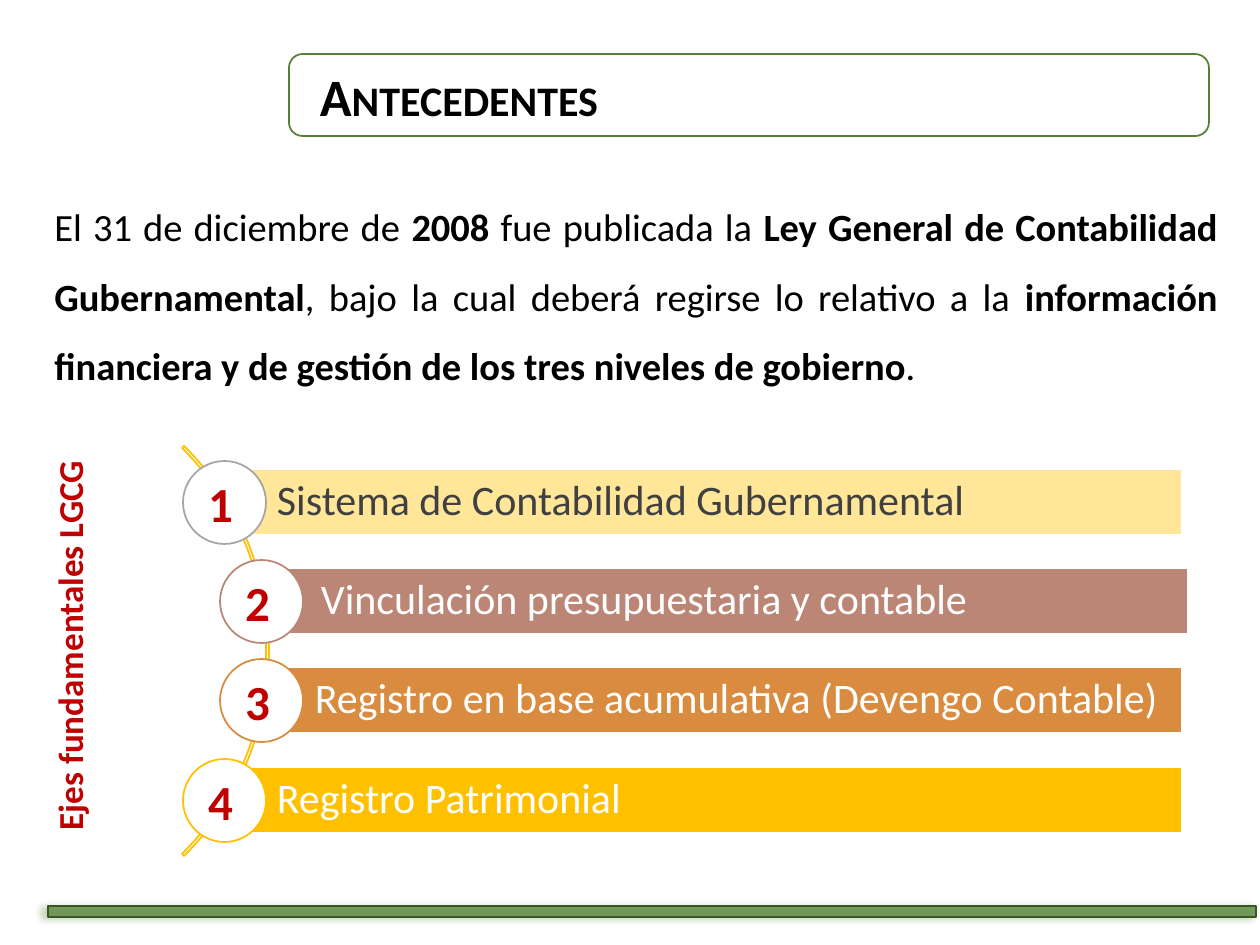
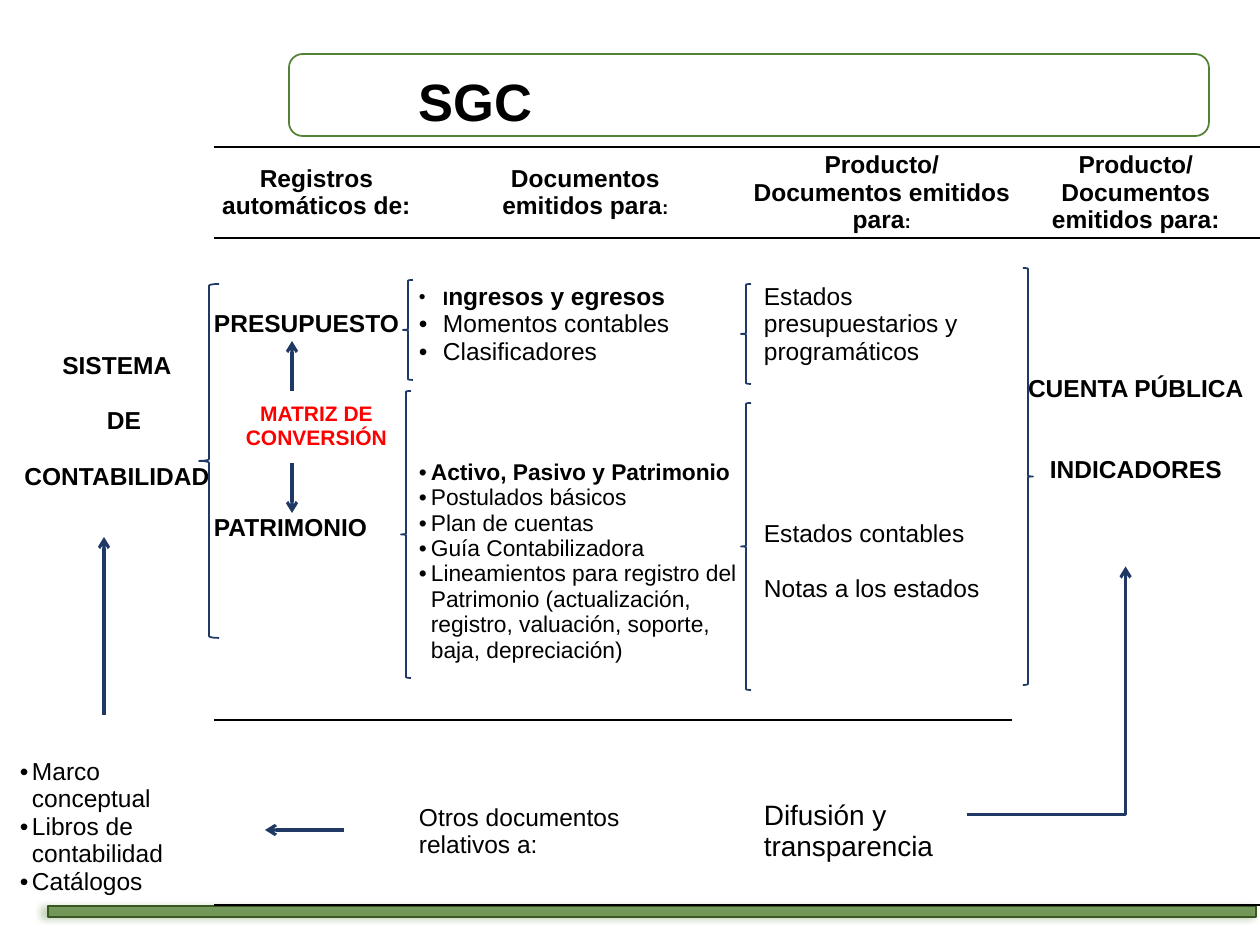
"""Build two slides on government accounting: background and the SGC scheme."""
from lxml import etree
from pptx import Presentation
from pptx.dml.color import RGBColor
from pptx.enum.shapes import MSO_CONNECTOR, MSO_SHAPE
from pptx.enum.text import MSO_ANCHOR, MSO_AUTO_SIZE, PP_ALIGN
from pptx.oxml.ns import qn
from pptx.util import Pt

RECT, ROUND, OVAL = MSO_SHAPE.RECTANGLE, MSO_SHAPE.ROUNDED_RECTANGLE, MSO_SHAPE.OVAL
ARC, OPEN, CLOSE = MSO_SHAPE.BLOCK_ARC, MSO_SHAPE.LEFT_BRACE, MSO_SHAPE.RIGHT_BRACE
LINE, ELBOW = MSO_CONNECTOR.STRAIGHT, MSO_CONNECTOR.ELBOW
LEFT, MID, JUST = PP_ALIGN.LEFT, PP_ALIGN.CENTER, PP_ALIGN.JUSTIFY
TOP, CENTER = MSO_ANCHOR.TOP, MSO_ANCHOR.MIDDLE
SCALE = 914400 / 126
HUES = {
    "black": "000000", "white": "FFFFFF", "gray": "404040", "ring": "A5A5A5",
    "green": "548235", "dark": "385723", "navy": "203864", "wine": "C00000",
    "red": "FF0000", "cream": "FFE699", "clay": "BB8676", "rust": "D98B3F",
    "gold": "FFC000",
}


def px(*nums):
    """Turn px into EMU."""
    return [round(n * SCALE) for n in nums]


def put(par, text, face, size, bold=False, hue="black"):
    """Add one run to a paragraph."""
    run = par.add_run()
    run.text = text
    font = run.font
    font.name, font.size, font.bold = face, Pt(size), bold
    font.color.rgb = RGBColor.from_string(HUES[hue])
    return run


deck = Presentation()
deck.slide_width, deck.slide_height = px(1260, 945)

TITLES = [
    ("Antecedentes", "Calibri", (306, 53, 306, 78)),
    ("SGC", "Arial", (349, 58, 140, 76)),
]
for name, face, box in TITLES:
    slide = deck.slides.add_slide(deck.slide_layouts[5])
    title = slide.shapes.title
    title.left, title.top, title.width, title.height = px(*box)
    frame = title.text_frame
    frame.word_wrap, frame.auto_size = False, MSO_AUTO_SIZE.NONE
    frame.vertical_anchor = TOP
    par = frame.paragraphs[0]
    par.alignment, par.line_spacing = MID, 1.07
    run = put(par, name, face, 30, True)
    run.font._element.set("cap", "small")

    border = slide.shapes.add_shape(ROUND, *px(289, 54, 920, 82))
    border.shadow.inherit = False
    border.fill.background()
    border.line.color.rgb = RGBColor.from_string(HUES["green"])
    border.line.width = Pt(1)

    band = slide.shapes.add_shape(RECT, *px(48, 906, 1208, 11))
    band.shadow.inherit = False
    band.fill.solid()
    band.fill.fore_color.rgb = RGBColor.from_string(HUES["green"])
    band.line.color.rgb = RGBColor.from_string(HUES["dark"])
    band.line.width = Pt(1)
    props = band._element.spPr
    tint = props.find(qn("a:solidFill"))[0]
    etree.SubElement(tint, qn("a:alpha"), val="75000")
    glow = etree.SubElement(
        props.find(qn("a:effectLst")), qn("a:outerShdw"),
        blurRad="50800", dist="38100", dir="10800000", algn="r", rotWithShape="0")
    tint = etree.SubElement(glow, qn("a:srgbClr"), val=HUES["green"])
    etree.SubElement(tint, qn("a:alpha"), val="40000")

past, scheme = deck.slides

intro = past.shapes.add_textbox(*px(42, 174, 1188, 223)).text_frame
intro.word_wrap = True
par = intro.paragraphs[0]
par.alignment, par.line_spacing = JUST, 1.5
for text, bold in [
    ("El 31 de diciembre de ", False),
    ("2008 ", True),
    ("fue publicada la ", False),
    ("Ley General de Contabilidad Gubernamental", True),
    (", bajo la cual deberá regirse lo relativo a la ", False),
    ("información financiera y de gestión de los tres niveles de gobierno", True),
    (".", False),
]:
    put(par, text, "Calibri", 22, bold)

side = past.shapes.add_textbox(*px(42, 426, 68, 417)).text_frame
side.word_wrap = True
side._txBody.bodyPr.set("vert", "vert270")
put(side.paragraphs[0], "Ejes fundamentales LGCG", "Calibri", 20, True, "wine")

arc = past.shapes.add_shape(ARC, *px(-311, 361, 580, 580))
for i, val in enumerate((189, 27, 0.005)):
    arc.adjustments[i] = val
arc.shadow.inherit = False
arc.fill.background()
arc.line.color.rgb = RGBColor.from_string(HUES["gold"])
arc.line.width = Pt(1)

AXES = [
    ("Sistema de Contabilidad Gubernamental", 224, 958, 183, "cream", "gray", "ring"),
    ("Vinculación presupuestaria y contable", 268, 920, 220, "clay", "white", "clay"),
    ("Registro en base acumulativa (Devengo Contable)", 262, 920, 220, "rust", "white", "rust"),
    ("Registro Patrimonial", 224, 958, 183, "gold", "white", "gold"),
]
for i, (text, left, wide, edge, fill, ink, ring) in enumerate(AXES):
    top = 469 + 298 * i // 3
    bar = past.shapes.add_shape(RECT, *px(left, top, wide, 66))
    disc = past.shapes.add_shape(OVAL, *px(edge, top - 8, 83, 83))
    for shape, hue, rim in ((bar, fill, "white"), (disc, "white", ring)):
        shape.shadow.inherit = False
        shape.fill.solid()
        shape.fill.fore_color.rgb = RGBColor.from_string(HUES[hue])
        shape.line.color.rgb = RGBColor.from_string(HUES[rim])
        shape.line.width = Pt(1)
        shape.text_frame.vertical_anchor = CENTER
    frame = bar.text_frame
    frame.word_wrap = True
    frame.margin_left, frame.margin_right = px(53, 9)
    frame.margin_top, frame.margin_bottom = px(9, 9)
    par = frame.paragraphs[0]
    par.alignment, par.line_spacing = LEFT, 0.9
    put(par, text, "Calibri", 24, False, ink)
    frame = disc.text_frame
    frame.word_wrap = False
    frame.margin_left, frame.margin_right = px(0, 8)
    frame.margin_top, frame.margin_bottom = px(0, 0)
    par = frame.paragraphs[0]
    par.alignment = MID
    put(par, str(i + 1), "Calibri", 28, True, "wine")

COLS = (194, 205, 333, 260, 248)
ROWS = (91, 30, 113, 22, 317, 38, 147)
KINDS = {
    "mid": (MID, 0, 0), "push": (MID, 14, 0), "flat": (LEFT, 0, 0),
    "in": (LEFT, 12, 0), "dot": (LEFT, 12, -12), "wide": (LEFT, 24, -24),
}
CELLS = {
    (0, 1): (None, [("mid", 0, [("Registros automáticos de:", 14, True)])]),
    (0, 2): (None, [("mid", 0, [("Documentos", 14, True)]),
                    ("mid", 0, [("emitidos para", 14, True), (":", 11, True)])]),
    (0, 3): (None, [("mid", 0, [("Producto/", 14, True)]),
                    ("mid", 0, [("Documentos emitidos para", 14, True), (":", 11, True)])]),
    (0, 4): (None, [("mid", 0, [("Producto/", 14, True)]),
                    ("mid", 0, [("Documentos emitidos para:", 14, True)])]),
    (2, 0): (84, [("mid", 0, [("SISTEMA", 14, True)]),
                  ("push", 16, [("DE", 14, True)]),
                  ("mid", 16, [("CONTABILIDAD", 14, True)])]),
    (2, 1): (None, [("flat", 0, [("PRESUPUESTO", 14, True)])]),
    (2, 2): (None, [("wide", 0, [("I", 11, True), ("ngresos y egresos", 14, True)]),
                    ("wide", 0, [("Momentos contables", 14)]),
                    ("wide", 0, [("Clasificadores", 14)])]),
    (2, 3): (None, [("in", 0, [("Estados presupuestarios y programáticos", 14)])]),
    (2, 4): (107, [("mid", 0, [("CUENTA PÚBLICA", 14, True)]),
                   ("mid", 31, [("INDICADORES", 14, True)])]),
    (4, 1): (0, [("mid", 0, [("MATRIZ DE CONVERSIÓN", 12, True, "red")]),
                 ("flat", 37, [("PATRIMONIO", 14, True)])]),
    (4, 2): (None, [("dot", 0, [("Activo, Pasivo y Patrimonio", 13, True)]),
                    ("dot", 0, [("Postulados básicos", 13)]),
                    ("dot", 0, [("Plan de cuentas", 13)]),
                    ("dot", 0, [("Guía Contabilizadora", 13)]),
                    ("dot", 0, [("Lineamientos para registro del Patrimonio (actualización, "
                                 "registro, valuación, soporte, baja, depreciación)", 13)])]),
    (4, 3): (None, [("in", 0, [("Estados contables", 14)]),
                    ("in", 16, [("Notas a los estados", 14)])]),
    (6, 0): (0, [("dot", 0, [("Marco conceptual", 14)]),
                 ("dot", 0, [("Libros de contabilidad", 14)]),
                 ("dot", 0, [("Catálogos", 14)])]),
    (6, 2): (None, [("flat", 0, [("Otros documentos", 14)]),
                    ("flat", 0, [("relativos a:", 14)])]),
    (6, 3): (None, [("in", 0, [("Difusión y transparencia", 16)])]),
}
RULES = {0: ("a:lnB", "a:lnT"), 4: ("a:lnB",), 6: ("a:lnB",)}

grid = scheme.shapes.add_table(7, 5, *px(20, 147, sum(COLS), sum(ROWS))).table
grid.first_row = grid.horz_banding = False
grid._tbl.tblPr.find(qn("a:tableStyleId")).text = "{2D5ABB26-0587-4C30-8999-92F81FD0307C}"
for col, wide in zip(grid.columns, px(*COLS)):
    col.width = wide
for row, high in zip(grid.rows, px(*ROWS)):
    row.height = high
grid.cell(2, 0).merge(grid.cell(4, 0))
grid.cell(2, 4).merge(grid.cell(6, 4))

for r in range(len(ROWS)):
    for c in range(len(COLS)):
        cell = grid.cell(r, c)
        cell.fill.background()
        cell.margin_left = cell.margin_right = cell.margin_top = cell.margin_bottom = 0
        sides = RULES.get(r, ()) if c and (r, c) != (4, 4) else ()
        if (r, c) == (2, 4):
            sides = ("a:lnB",)
        for tag in sides:
            rule = etree.Element(qn(tag), w="12700")
            fill = etree.SubElement(rule, qn("a:solidFill"))
            etree.SubElement(fill, qn("a:srgbClr"), val=HUES["black"])
            cell._tc.tcPr.insert(0, rule)
        frame = cell.text_frame
        if (r, c) not in CELLS:
            frame.paragraphs[0]._p.get_or_add_endParaRPr().set("sz", "600")
            continue
        inset, pars = CELLS[r, c]
        cell.vertical_anchor = CENTER if inset is None else TOP
        cell.margin_top = px(inset or 0)[0]
        for i, (kind, space, runs) in enumerate(pars):
            par = frame.add_paragraph() if i else frame.paragraphs[0]
            par.alignment, left, hang = KINDS[kind]
            if space:
                par.space_before = Pt(space)
            props = par._p.get_or_add_pPr()
            for key, val in zip(("marL", "indent"), px(left, hang)):
                props.set(key, str(val))
            if hang:
                etree.SubElement(props, qn("a:buFont"), typeface="Arial")
                etree.SubElement(props, qn("a:buChar"), char="•")
            for text, *look in runs:
                put(par, text, "Arial", *look)

for kind, *box in [
    (OPEN, 199, 284, 20, 354), (OPEN, 403, 280, 10, 100), (OPEN, 401, 391, 10, 287),
    (OPEN, 741, 284, 10, 100), (OPEN, 741, 403, 10, 287), (CLOSE, 1023, 268, 10, 417),
]:
    brace = scheme.shapes.add_shape(kind, *px(*box))
    brace.shadow.inherit = False
    brace.fill.background()
    brace.line.color.rgb = RGBColor.from_string(HUES["navy"])
    brace.line.width = Pt(1)

for kind, *ends in [
    (ELBOW, 1170, 770, 922, 611), (LINE, 344, 830, 265, 830), (LINE, 104, 715, 104, 537),
    (LINE, 292, 391, 292, 341), (LINE, 292, 463, 292, 513),
]:
    arrow = scheme.shapes.add_connector(kind, *px(*ends))
    arrow.line.color.rgb = RGBColor.from_string(HUES["navy"])
    arrow.line.width = Pt(1.75)
    props = arrow._element.spPr
    etree.SubElement(props.find(qn("a:ln")), qn("a:tailEnd"), type="arrow")
    etree.SubElement(props, qn("a:effectLst"))
    if kind == ELBOW:
        props.find(qn("a:xfrm")).set("rot", "5400000")
        bend = props.find(qn("a:prstGeom")).find(qn("a:avLst"))
        etree.SubElement(bend, qn("a:gd"), name="adj1", fmla="val 0")

deck.save("out.pptx")
